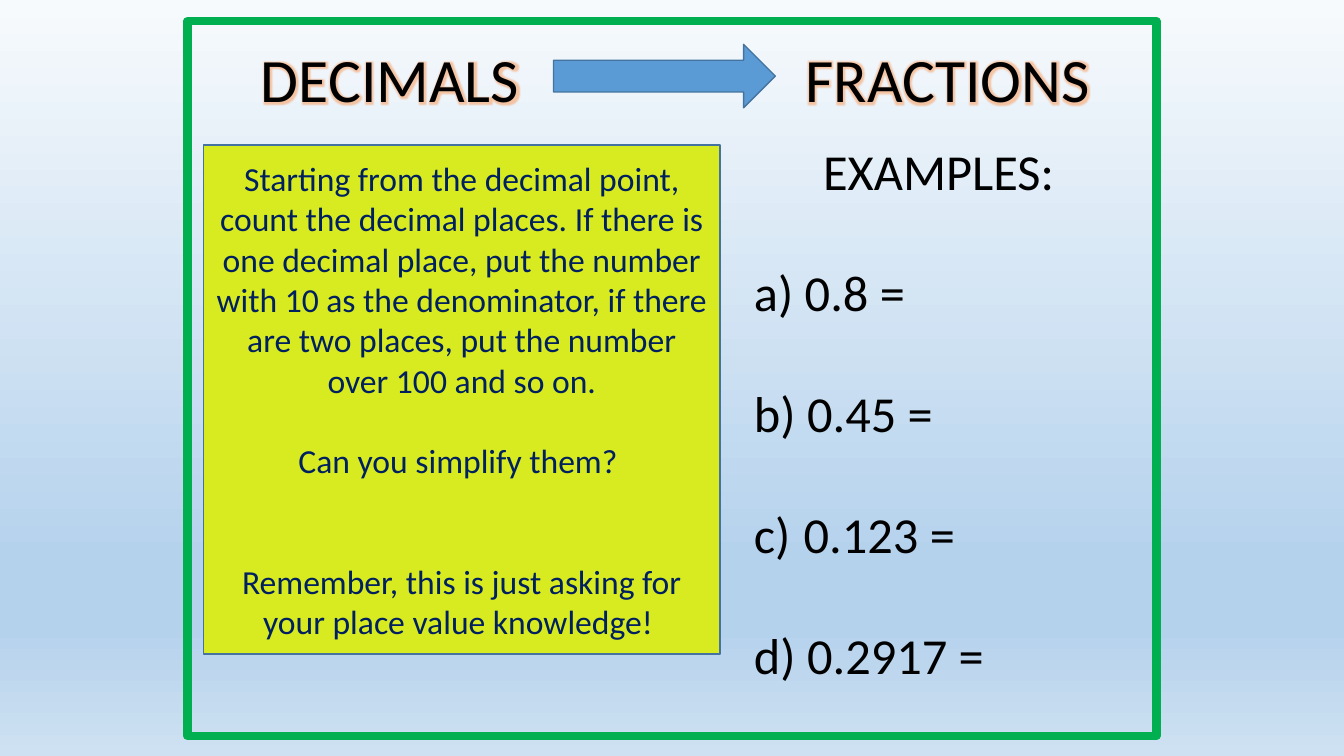
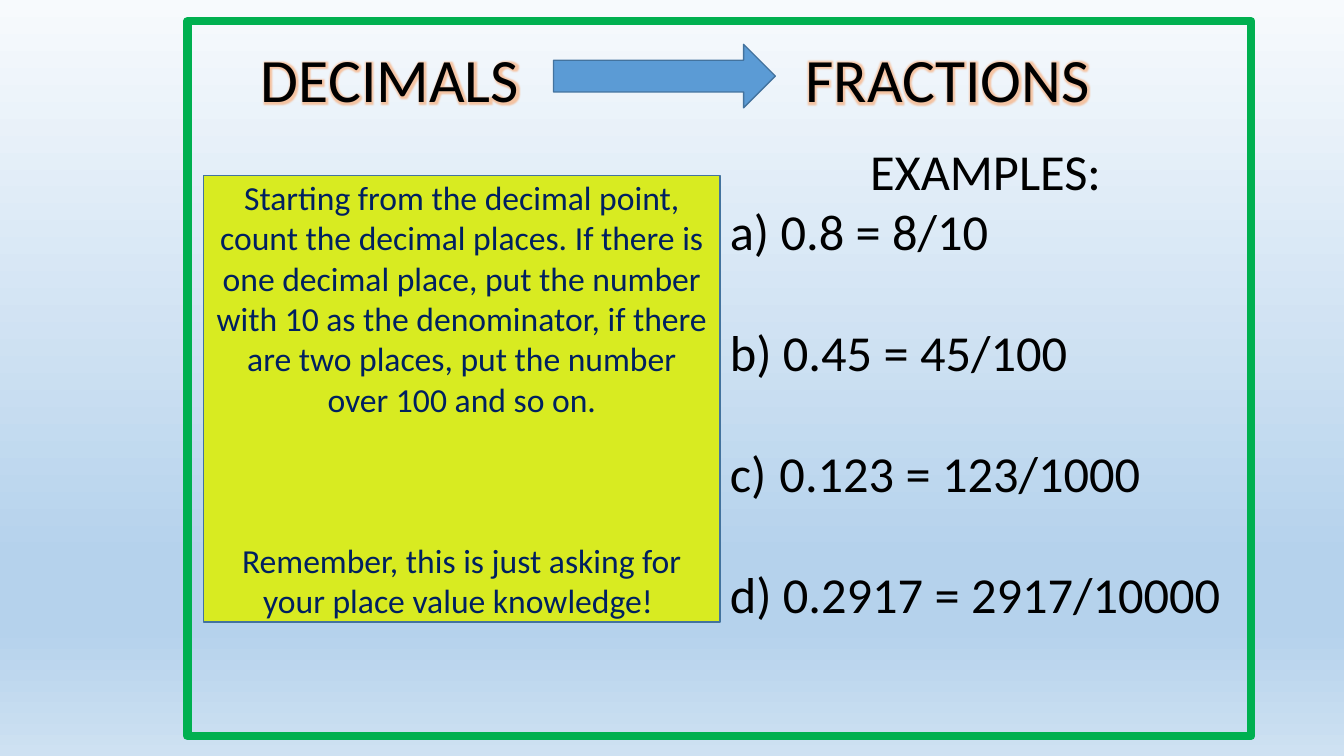
"""Build two slides on turning decimals into fractions."""
from dataclasses import dataclass

from lxml.etree import SubElement
from pptx import Presentation
from pptx.dml.color import RGBColor
from pptx.enum.shapes import MSO_SHAPE
from pptx.enum.text import MSO_ANCHOR, MSO_AUTO_SIZE, PP_ALIGN
from pptx.oxml import parse_xml
from pptx.oxml.ns import nsdecls, qn
from pptx.util import Inches, Pt

FONT = "Calibri"
BLACK, NAVY, GREEN, LIME = "000000", "002060", "00B050", "D8EB21"
BLUE, BLUE_EDGE, GLOW = "5B9BD5", "43739E", "ED7D31"
BACKGROUND_STOPS = ((0, "F7FAFD"), (74, "B5D2EC"), (83, "B5D2EC"), (100, "CEE1F2"))
LINE_HEIGHT = 1.2
RULE = (
    "Starting from the decimal point, count the decimal places. If there is one "
    "decimal place, put the number with 10 as the denominator, if there are two "
    "places, put the number over 100 and so on."
)
SIMPLIFY = "Can you simplify them? "
REMINDER = "Remember, this is just asking for your place value knowledge! "


@dataclass(frozen=True)
class Box:
    left: float
    top: float
    width: float
    height: float

    def lengths(self) -> tuple:
        return tuple(Inches(v) for v in (self.left, self.top, self.width, self.height))


@dataclass(frozen=True)
class Line:
    text: str
    gap: int = 0
    align: PP_ALIGN = PP_ALIGN.CENTER
    lettered: bool = False


@dataclass(frozen=True)
class Lesson:
    frame: Box
    note_box: Box
    note: tuple[Line, ...]
    examples_box: Box
    first_gap: int
    examples: tuple[str, ...]


HEADINGS = (
    ("DECIMALS", Box(2.49, 0.36, 3.31, 0.84)),
    ("FRACTIONS", Box(7.89, 0.36, 3.78, 0.84)),
)
ARROW = Box(5.49, 0.44, 2.2, 0.63)
LESSONS = (
    Lesson(
        Box(1.86, 0.21, 9.61, 7.09),
        Box(2.02, 1.44, 5.12, 5.05),
        (Line(RULE), Line(SIMPLIFY, 1), Line(REMINDER, 2)),
        Box(7.38, 1.34, 3.86, 5.55),
        1,
        ("0.8 =", "0.45 =", "0.123 =", "0.2917 ="),
    ),
    Lesson(
        Box(1.86, 0.21, 10.55, 7.09),
        Box(2.02, 1.74, 5.12, 4.43),
        (Line(RULE), Line(REMINDER, 3)),
        Box(7.14, 1.34, 5.27, 4.95),
        0,
        ("0.8 = 8/10", "0.45 = 45/100", "0.123 = 123/1000", "0.2917 = 2917/10000"),
    ),
)


def rgb(value: str) -> RGBColor:
    return RGBColor.from_string(value)


def paint_background(master) -> None:
    fill = master.background.fill
    fill.gradient()
    fill.gradient_angle = 270
    stops = next(master.element.iter(qn("a:gsLst")))
    stops.clear()
    for percent, color in BACKGROUND_STOPS:
        stop = SubElement(stops, qn("a:gs"), pos=str(percent * 1000))
        SubElement(stop, qn("a:srgbClr"), val=color)


def add_block(s, kind: MSO_SHAPE, box: Box, fill: str | None, line: str, weight: float):
    sp = s.shapes.add_shape(kind, *box.lengths())
    sp.shadow.inherit = False
    if fill:
        sp.fill.solid()
        sp.fill.fore_color.rgb = rgb(fill)
    else:
        sp.fill.background()
    sp.line.color.rgb = rgb(line)
    sp.line.width = Pt(weight)
    return sp


def add_text_box(s, box: Box):
    tf = s.shapes.add_textbox(*box.lengths()).text_frame
    tf.auto_size = MSO_AUTO_SIZE.SHAPE_TO_FIT_TEXT
    return tf


def letter(p) -> None:
    pPr = p._p.get_or_add_pPr()
    pPr.set("marL", str(Inches(0.38)))
    pPr.set("indent", str(-Inches(0.38)))
    SubElement(pPr, qn("a:buFont"), typeface=FONT)
    SubElement(pPr, qn("a:buAutoNum"), type="alphaLcParenR")


def write(tf, lines: tuple[Line, ...], size: int, color: str) -> None:
    tf.word_wrap = True
    for i, line in enumerate(lines):
        p = tf.add_paragraph() if i else tf.paragraphs[0]
        p.text = line.text
        p.alignment = line.align
        p.space_before = Pt(line.gap * size * LINE_HEIGHT)
        if line.lettered:
            letter(p)
        for r in p.runs:
            r.font.size = Pt(size)
            r.font.name = FONT
            r.font.color.rgb = rgb(color)


def add_glow(tf) -> None:
    for r in tf.paragraphs[0].runs:
        glow = parse_xml(
            f'<a:effectLst {nsdecls("a")}><a:glow rad="63500"><a:srgbClr val="{GLOW}">'
            '<a:satMod val="175000"/><a:alpha val="40000"/>'
            "</a:srgbClr></a:glow></a:effectLst>"
        )
        r.font._element.find(qn("a:solidFill")).addnext(glow)


def add_lesson(prs, lesson: Lesson) -> None:
    s = prs.slides.add_slide(prs.slide_layouts[6])
    for text, box in HEADINGS:
        tf = add_text_box(s, box)
        write(tf, (Line(text, align=PP_ALIGN.LEFT),), 44, BLACK)
        add_glow(tf)
    add_block(s, MSO_SHAPE.RIGHT_ARROW, ARROW, BLUE, BLUE_EDGE, 1)
    add_block(s, MSO_SHAPE.RECTANGLE, lesson.frame, None, GREEN, 6)
    note = add_block(s, MSO_SHAPE.RECTANGLE, lesson.note_box, LIME, BLUE_EDGE, 1)
    note.text_frame.vertical_anchor = MSO_ANCHOR.MIDDLE
    write(note.text_frame, lesson.note, 24, NAVY)
    examples = tuple(
        Line(f" {text}", 1 if i else lesson.first_gap, PP_ALIGN.LEFT, True)
        for i, text in enumerate(lesson.examples)
    )
    write(add_text_box(s, lesson.examples_box), (Line("EXAMPLES:"), *examples), 36, BLACK)


def main() -> None:
    prs = Presentation()
    prs.slide_width, prs.slide_height = Inches(13.33), Inches(7.5)
    paint_background(prs.slide_master)
    for lesson in LESSONS:
        add_lesson(prs, lesson)
    prs.save("out.pptx")


if __name__ == "__main__":
    main()
